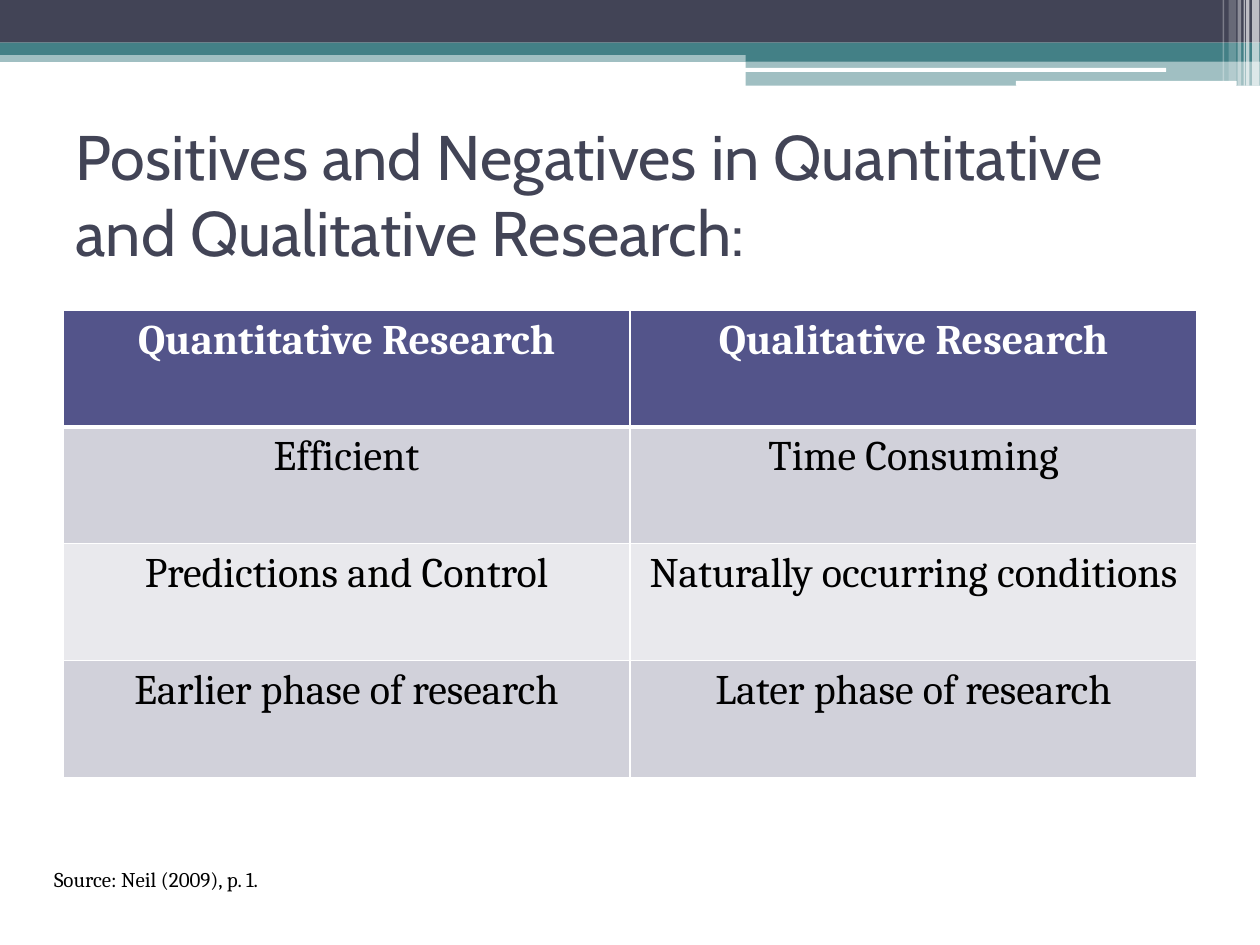
from lxml.etree import SubElement
from pptx import Presentation
from pptx.dml.color import RGBColor
from pptx.enum.shapes import MSO_SHAPE as Shape
from pptx.enum.text import MSO_ANCHOR as Anchor, MSO_AUTO_SIZE as AutoSize, PP_ALIGN as Align
from pptx.oxml.ns import qn
from pptx.util import Cm, Pt

COLORS = {"navy": "424456", "teal": "438086", "white": "FFFFFF", "black": "000000",
          "header": "53548A", "band": "D1D1DA", "light": "E9E9ED"}

TITLE = "Positives and Negatives in Quantitative and Qualitative Research:"
ROWS = [
    ("Quantitative Research", "Qualitative Research"),
    ("Efficient", "Time Consuming"),
    ("Predictions and Control", "Naturally occurring conditions"),
    ("Earlier phase of research", "Later phase of research"),
]
SOURCE = "Source: Neil (2009), p. 1."

# left, top, width, height in cm; colour; opacity in percent
BANDS = [
    (0, 1.02, 25.4, 0.23, "teal", 50),
    (0, 0, 25.4, 0.86, "navy", 100),
    (0, 0.86, 25.4, 0.25, "teal", 100),
    (15.03, 0.99, 10.37, 0.25, "teal", 100),
    (15.03, 1.23, 10.37, 0.5, "teal", 50),
]
ROUNDED_LINES = [
    (15.01, 1.37, 8.5, 0.08, "white", 100),
    (20.48, 1.63, 4.45, 0.1, "white", 100),
]
# left, width, height in cm; opacity in percent
STRIPES = [
    (25.24, 0.15, 1.73, 65), (25.12, 0.07, 1.73, 65), (25.07, 0.03, 1.73, 60),
    (24.95, 0.07, 1.73, 40), (24.77, 0.15, 1.63, 20), (24.65, 0.03, 1.63, 30),
]


def rgb(name):
    return RGBColor.from_string(COLORS[name])


def set_font(paragraph, name, size, color, bold=False):
    font = paragraph.font
    font.name, font.size, font.bold = name, Pt(size), bold
    font.color.rgb = rgb(color)


def add_bar(slide, kind, left, top, width, height, color, opacity):
    bar = slide.shapes.add_shape(kind, Cm(left), Cm(top), Cm(width), Cm(height))
    bar.shadow.inherit = False
    bar.line.fill.background()
    bar.fill.solid()
    bar.fill.fore_color.rgb = rgb(color)
    if opacity < 100:
        fill_color = bar.fill._xPr.find(qn("a:solidFill"))[0]
        SubElement(fill_color, qn("a:alpha"), val=str(opacity * 1000))


def add_borders(cell, widths):
    """Draw white cell borders; widths are points for left, right, top, bottom."""
    properties = cell._tc.get_or_add_tcPr()
    for side, width in zip("LRTB", widths):
        line = SubElement(properties, qn(f"a:ln{side}"), w=str(Pt(width)))
        fill = SubElement(line, qn("a:solidFill"))
        SubElement(fill, qn("a:srgbClr"), val=COLORS["white"])


def add_comparison(slide):
    table = slide.shapes.add_table(len(ROWS), len(ROWS[0]), Cm(1.27), Cm(6.25),
                                   Cm(22.86), Cm(9.42)).table
    table.horz_banding = False
    for row_index, texts in enumerate(ROWS):
        is_header = row_index == 0
        fill = "header" if is_header else ("light", "band")[row_index % 2]
        top, bottom = 3 if row_index == 1 else 1, 3 if is_header else 1
        for column_index, text in enumerate(texts):
            cell = table.cell(row_index, column_index)
            add_borders(cell, (1, 1, top, bottom))
            cell.fill.solid()
            cell.fill.fore_color.rgb = rgb(fill)
            cell.text = text
            para = cell.text_frame.paragraphs[0]
            para.alignment = Align.CENTER
            set_font(para, "Cambria", 24, "white" if is_header else "black", is_header)


def add_title(slide):
    title = slide.shapes.title
    title.left, title.top, title.width, title.height = Cm(1.27), Cm(3.17), Cm(22.86), Cm(2.97)
    frame = title.text_frame
    frame.text = TITLE
    frame.word_wrap = True
    frame.auto_size = AutoSize.NONE
    frame.vertical_anchor = Anchor.MIDDLE
    frame.margin_bottom = Cm(1.65)  # lifts the two lines above the middle
    frame.paragraphs[0].alignment = Align.LEFT
    set_font(frame.paragraphs[0], "Cabin", 36, "navy")


def add_source(slide):
    frame = slide.shapes.add_textbox(Cm(0.84), Cm(17.35), Cm(15.04), Cm(0.77)).text_frame
    frame.word_wrap = True
    frame.text = SOURCE
    set_font(frame.paragraphs[0], "Cambria", 12, "black")


def main():
    deck = Presentation()
    deck.slide_width, deck.slide_height = Cm(25.4), Cm(19.05)
    slide = deck.slides.add_slide(deck.slide_layouts[5])
    for band in BANDS:
        add_bar(slide, Shape.RECTANGLE, *band)
    for line in ROUNDED_LINES:
        add_bar(slide, Shape.ROUNDED_RECTANGLE, *line)
    for left, width, height, opacity in STRIPES:
        add_bar(slide, Shape.RECTANGLE, left, 0, width, height, "white", opacity)
    add_title(slide)
    add_comparison(slide)
    add_source(slide)
    deck.save("out.pptx")


if __name__ == "__main__":
    main()
